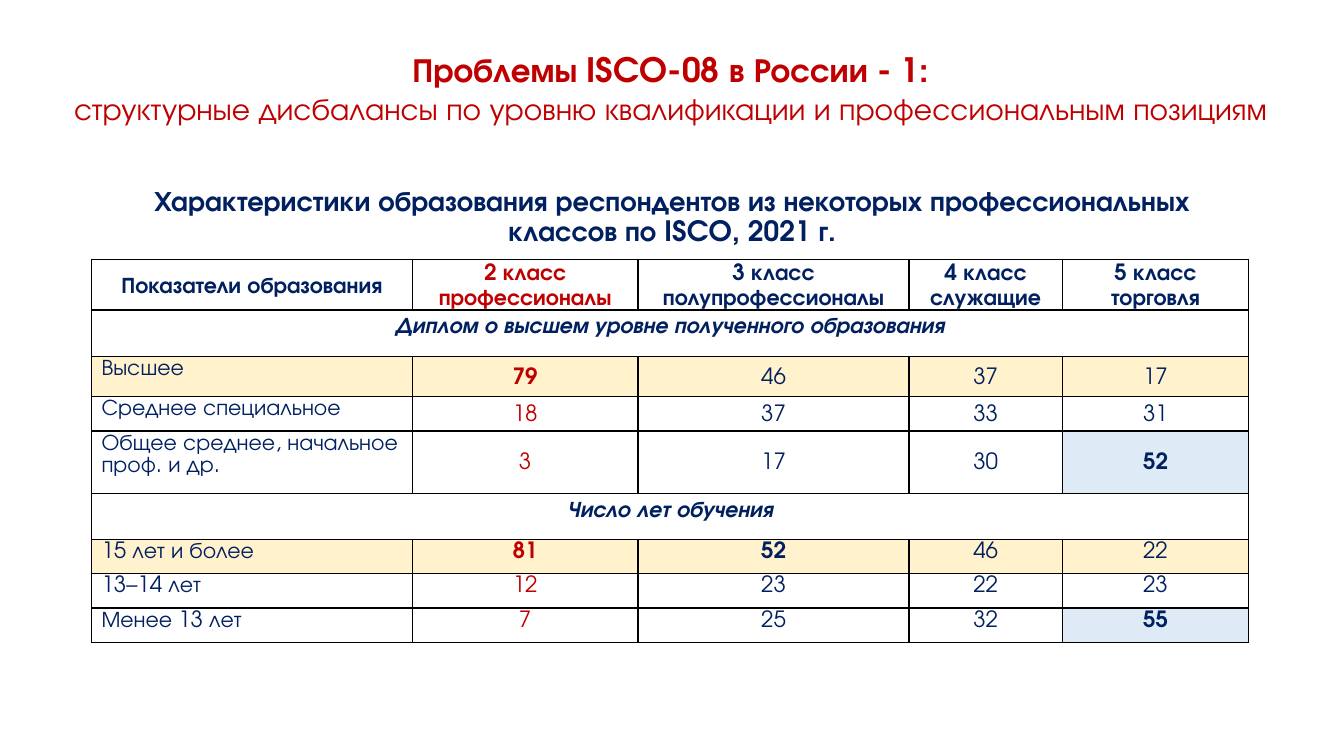
from pptx import Presentation
from pptx.dml.color import RGBColor
from pptx.enum.text import MSO_ANCHOR, PP_ALIGN
from pptx.oxml import parse_xml
from pptx.oxml.ns import nsdecls
from pptx.util import Cm, Pt

FONT = "TeX Gyre Adventor"
NAVY = RGBColor(0x00, 0x20, 0x60)
RED = RGBColor(0xC0, 0x00, 0x00)
CREAM = RGBColor(0xFF, 0xF2, 0xCC)
PALE_BLUE = RGBColor(0xDE, 0xEB, 0xF7)

COLUMN_WIDTHS = [8.08, 5.69, 6.83, 3.86, 4.7]
ROW_HEIGHTS = [1.09, 1.17, 1.02, 0.86, 1.57, 1.17, 0.86, 0.86, 0.86]
ROWS = [
    ["Показатели образования", "2 класс профессионалы", "3 класс полупрофессионалы",
     "4 класс служащие", "5 класс торговля"],
    ["Диплом о высшем уровне полученного образования"],
    ["Высшее", "79", "46", "37", "17"],
    ["Среднее специальное", "18", "37", "33", "31"],
    ["Общее среднее, начальное проф. и др.", "3", "17", "30", "52"],
    ["Число лет обучения"],
    ["15 лет и более", "81", "52", "46", "22"],
    ["13–14 лет", "12", "23", "22", "23"],
    ["Менее 13 лет", "7", "25", "32", "55"],
]
CREAM_ROWS = {2, 6}
BLUE_CELLS = {(4, 4), (8, 4)}
BOLD_CELLS = BLUE_CELLS | {(2, 1), (6, 1), (6, 2)}
YEARS_START = 6


def set_all(obj, values):
    for name, value in values.items():
        setattr(obj, name, value)


def write(p, text, size, color, bold=False, italic=False, **layout):
    set_all(p, layout)
    r = p.add_run()
    r.text = text
    set_all(r.font, {"name": FONT, "size": Pt(size), "bold": bold, "italic": italic})
    r.font.color.rgb = color


def add_borders(cell):
    tcPr = cell._tc.get_or_add_tcPr()
    for i, side in enumerate(("lnL", "lnR", "lnT", "lnB")):
        tcPr.insert(i, parse_xml(
            f'<a:{side} {nsdecls("a")} w="12700"><a:solidFill>'
            f'<a:srgbClr val="000000"/></a:solidFill></a:{side}>'))


def format_cell(cell, fill=None, section=False, middle=False):
    side, top, bottom = (0.33, 0.15, 0.15) if section else (0.25, 0.03, 0)
    set_all(cell, {
        "margin_left": Cm(side), "margin_right": Cm(side),
        "margin_top": Cm(top), "margin_bottom": Cm(bottom),
        "vertical_anchor": MSO_ANCHOR.MIDDLE if middle else MSO_ANCHOR.TOP,
    })
    if fill is None:
        cell.fill.background()
    else:
        cell.fill.solid()
        cell.fill.fore_color.rgb = fill
    add_borders(cell)


def add_heading(s):
    tf = s.shapes.add_textbox(Cm(1.07), Cm(1.12), Cm(31.67), Cm(1.96)).text_frame
    tf.word_wrap = True
    write(tf.paragraphs[0], "Проблемы ISCO-08 в России - 1:", 24, RED, bold=True,
          alignment=PP_ALIGN.CENTER)
    write(tf.add_paragraph(),
          "структурные дисбалансы по уровню квалификации и профессиональным позициям",
          22, RED, alignment=PP_ALIGN.CENTER)


def add_table_title(s):
    title = s.shapes.title
    set_all(title, {"left": Cm(3.05), "top": Cm(4.5), "width": Cm(27.79), "height": Cm(1.96)})
    tf = title.text_frame
    set_all(tf, {"word_wrap": True, "vertical_anchor": MSO_ANCHOR.MIDDLE})
    write(tf.paragraphs[0],
          "Характеристики образования респондентов из некоторых "
          "профессиональных классов по ISCO, 2021 г.",
          20, NAVY, bold=True, alignment=PP_ALIGN.CENTER, line_spacing=0.9)


def add_education_table(s):
    table = s.shapes.add_table(len(ROWS), len(COLUMN_WIDTHS), Cm(2.31), Cm(6.53),
                               Cm(sum(COLUMN_WIDTHS)), Cm(sum(ROW_HEIGHTS))).table
    set_all(table, {"first_row": False, "horz_banding": False})
    for column, width in zip(table.columns, COLUMN_WIDTHS):
        column.width = Cm(width)
    for i, (texts, height) in enumerate(zip(ROWS, ROW_HEIGHTS)):
        table.rows[i].height = Cm(height)
        header, section = i == 0, len(texts) == 1
        if section:
            table.cell(i, 0).merge(table.cell(i, len(COLUMN_WIDTHS) - 1))
        for j in range(len(COLUMN_WIDTHS)):
            fill = CREAM if i in CREAM_ROWS else PALE_BLUE if (i, j) in BLUE_CELLS else None
            middle = header or (j > 0 and i < YEARS_START)
            format_cell(table.cell(i, j), fill, section, middle and not section)
        for j, text in enumerate(texts):
            centred = header or section or j > 0
            write(table.cell(i, j).text_frame.paragraphs[0], text, 16,
                  RED if j == 1 else NAVY,
                  bold=header or section or (i, j) in BOLD_CELLS, italic=section,
                  alignment=PP_ALIGN.CENTER if centred else PP_ALIGN.LEFT,
                  line_spacing=1.2 if header else 1.07,
                  space_before=Pt(6 if header else 0), space_after=Pt(6 if header else 8))


def main():
    prs = Presentation()
    set_all(prs, {"slide_width": Cm(33.87), "slide_height": Cm(19.05)})
    s = prs.slides.add_slide(prs.slide_layouts[5])
    add_table_title(s)
    add_education_table(s)
    add_heading(s)
    prs.save("out.pptx")


if __name__ == "__main__":
    main()
